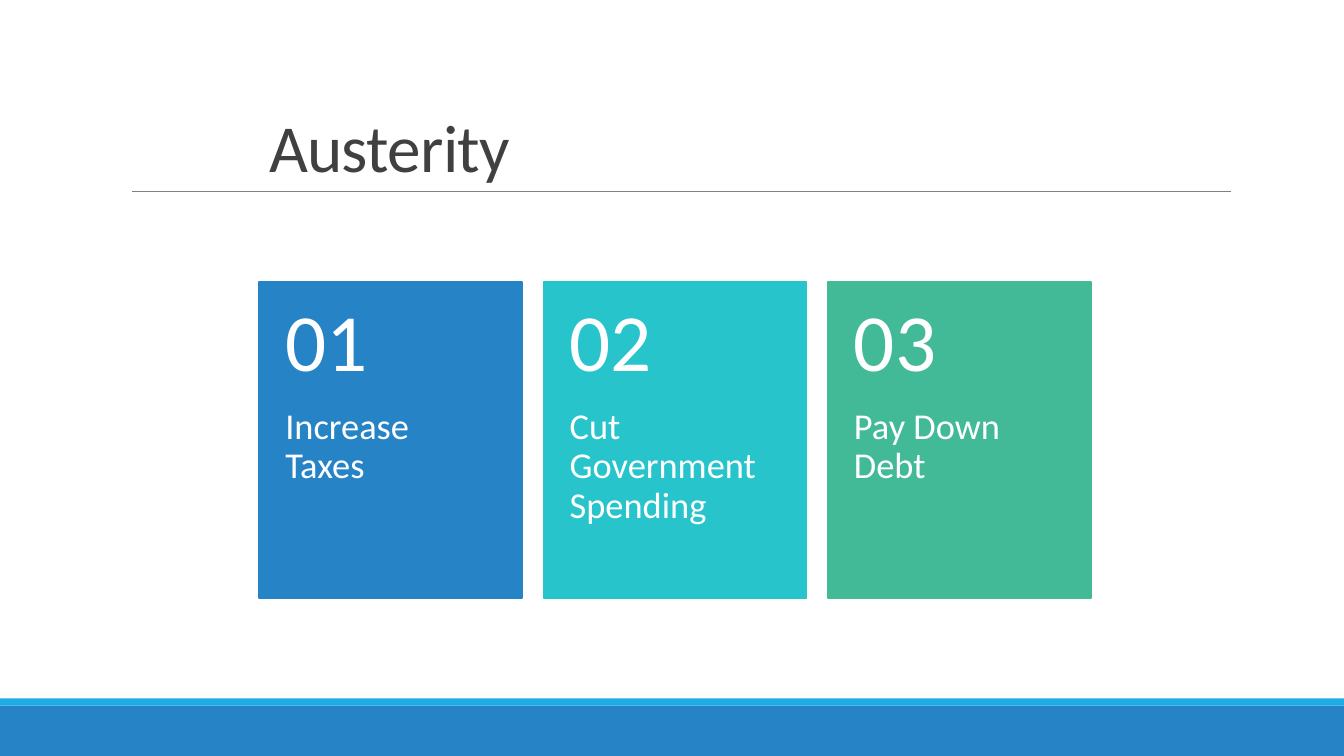
from dataclasses import dataclass

from lxml.etree import SubElement
from pptx import Presentation
from pptx.dml.color import RGBColor
from pptx.enum.shapes import MSO_CONNECTOR, MSO_SHAPE
from pptx.enum.text import MSO_ANCHOR as Anchor
from pptx.oxml.ns import qn
from pptx.shapes.autoshape import Shape
from pptx.slide import Slide
from pptx.text.text import _Paragraph as Paragraph
from pptx.util import Inches, Pt

COLORS = {
    "blue": "2683C6",
    "sky": "1CADE4",
    "turquoise": "28C4CC",
    "green": "42BA97",
    "rule": "808080",
    "title": "404040",
    "white": "FFFFFF",
}
FONT = "Calibri"
SLIDE_WIDTH, SLIDE_HEIGHT = 13.33, 7.5
CARD_LEFT, CARD_TOP, CARD_WIDTH, CARD_HEIGHT = 2.57, 2.8, 2.61, 3.13
CARD_STEP = 2.82
NUMBER_HEIGHT = 1.25


@dataclass(frozen=True)
class Box:
    left: float
    top: float
    width: float
    height: float

    def lengths(self) -> list[int]:
        return [Inches(v) for v in (self.left, self.top, self.width, self.height)]


@dataclass(frozen=True)
class Insets:
    left: float = 0.1
    top: float = 0.05
    right: float = 0.1
    bottom: float = 0.05


@dataclass(frozen=True)
class TextStyle:
    size: int
    color: str
    anchor: Anchor
    line_spacing: float
    insets: Insets


@dataclass(frozen=True)
class Measure:
    label: str
    color: str


TITLE = TextStyle(48, "title", Anchor.BOTTOM, 0.85, Insets())
NUMBER = TextStyle(58, "white", Anchor.MIDDLE, 0.9, Insets(0.26, 0.18, 0.26, 0.18))
LABEL = TextStyle(26, "white", Anchor.TOP, 0.9, Insets(0.26, 0, 0.26, 0.36))

MEASURES = [
    Measure("Increase Taxes", "blue"),
    Measure("Cut Government Spending", "turquoise"),
    Measure("Pay Down Debt", "green"),
]


def rgb(name: str) -> RGBColor:
    return RGBColor.from_string(COLORS[name])


def add_block(slide: Slide, box: Box, color: str) -> Shape:
    block = slide.shapes.add_shape(MSO_SHAPE.RECTANGLE, *box.lengths())
    block.shadow.inherit = False
    block.fill.solid()
    block.fill.fore_color.rgb = rgb(color)
    block.line.fill.background()
    return block


def add_text(slide: Slide, box: Box, text: str, style: TextStyle) -> Paragraph:
    frame = slide.shapes.add_textbox(*box.lengths()).text_frame
    frame.word_wrap = True
    frame.vertical_anchor = style.anchor
    frame.margin_left = Inches(style.insets.left)
    frame.margin_top = Inches(style.insets.top)
    frame.margin_right = Inches(style.insets.right)
    frame.margin_bottom = Inches(style.insets.bottom)
    paragraph = frame.paragraphs[0]
    paragraph.text = text
    paragraph.line_spacing = style.line_spacing
    paragraph.font.name = FONT
    paragraph.font.size = Pt(style.size)
    paragraph.font.color.rgb = rgb(style.color)
    return paragraph


def add_title(slide: Slide) -> None:
    rule = slide.shapes.add_connector(
        MSO_CONNECTOR.STRAIGHT, Inches(1.31), Inches(1.9), Inches(12.21), Inches(1.9)
    )
    rule.line.color.rgb = rgb("rule")
    rule.line.width = Pt(0.5)
    SubElement(rule._element.spPr, qn("a:effectLst"))
    title = add_text(slide, Box(CARD_LEFT, 0.31, 8.25, 1.59), "Austerity", TITLE)
    title.runs[0]._r.get_or_add_rPr().set("spc", "-50")


def add_card(slide: Slide, index: int, measure: Measure) -> None:
    left = CARD_LEFT + index * CARD_STEP
    card = add_block(slide, Box(left, CARD_TOP, CARD_WIDTH, CARD_HEIGHT), measure.color)
    card.line.color.rgb = rgb(measure.color)
    card.line.width = Pt(1.25)
    label_box = Box(
        left, CARD_TOP + NUMBER_HEIGHT, CARD_WIDTH, CARD_HEIGHT - NUMBER_HEIGHT
    )
    add_text(slide, label_box, measure.label, LABEL)
    number_box = Box(left, CARD_TOP, CARD_WIDTH, NUMBER_HEIGHT)
    add_text(slide, number_box, f"{index + 1:02d}", NUMBER)


def main() -> None:
    deck = Presentation()
    deck.slide_width = Inches(SLIDE_WIDTH)
    deck.slide_height = Inches(SLIDE_HEIGHT)
    slide = deck.slides.add_slide(deck.slide_layouts[6])
    add_block(slide, Box(0, 7, SLIDE_WIDTH, 0.5), "blue")
    add_block(slide, Box(0, 6.93, SLIDE_WIDTH, 0.07), "sky")
    add_title(slide)
    for index, measure in enumerate(MEASURES):
        add_card(slide, index, measure)
    deck.save("out.pptx")


if __name__ == "__main__":
    main()
